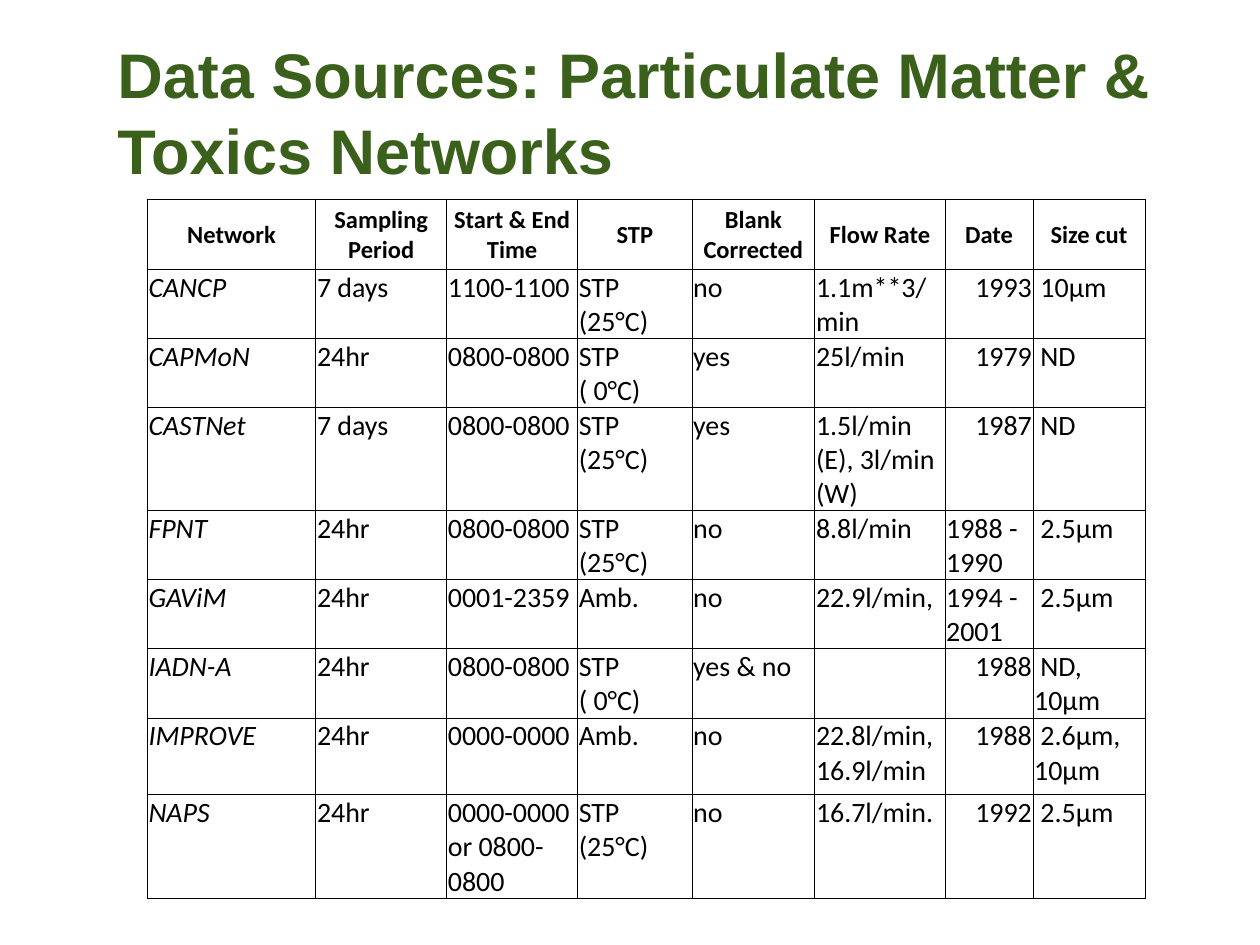
"""Build a slide with a table of particulate matter and toxics networks."""
from lxml import etree
from pptx import Presentation
from pptx.enum.text import MSO_ANCHOR, PP_ALIGN
from pptx.dml.color import RGBColor
from pptx.oxml.ns import qn
from pptx.util import Pt

TOP, MIDDLE = MSO_ANCHOR.TOP, MSO_ANCHOR.MIDDLE
LEFT, CENTER, RIGHT = PP_ALIGN.LEFT, PP_ALIGN.CENTER, PP_ALIGN.RIGHT

COLORS = {"title": "3A601B", "text": "000000", "border": "000000"}
TITLE = "Data Sources: Particulate Matter & Toxics Networks"
HEADER = ["Network", "Sampling Period", "Start & End Time", "STP",
          "Blank Corrected", "Flow Rate", "Date", "Size cut"]
NETWORKS = [
    ["CANCP", "7 days", "1100-1100", "STP  (25°C)", "no", "1.1m**3/min", "1993", " 10µm"],
    ["CAPMoN", "24hr", "0800-0800", "STP  ( 0°C)", "yes", "25l/min", "1979", " ND"],
    ["CASTNet", "7 days", "0800-0800", "STP (25°C)", "yes", "1.5l/min (E), 3l/min (W)", "1987", " ND"],
    ["FPNT", "24hr", "0800-0800", "STP (25°C)", "no", "8.8l/min", "1988 - 1990", " 2.5µm"],
    ["GAViM", "24hr", "0001-2359", "Amb.", "no", "22.9l/min,", "1994 - 2001", " 2.5µm"],
    ["IADN-A", "24hr", "0800-0800", "STP  ( 0°C)", "yes & no", "", "1988", " ND, 10µm"],
    ["IMPROVE", "24hr", "0000-0000", "Amb.", "no", "22.8l/min, 16.9l/min", "1988", " 2.6µm, 10µm"],
    ["NAPS", "24hr", "0000-0000 or 0800-0800", "STP (25°C)", "no", "16.7l/min.", "1992", " 2.5µm"],
]
COL_WIDTHS = [96.3, 74.8, 74.8, 65.4, 70.2, 74.4, 50.3, 64]
ROW_HEIGHTS = [40, 39.5, 39.5, 59, 39.5, 39.5, 39.5, 44, 59]
TITLE_BOX = (60, 21.6, 642, 84)
TABLE_POS = (84.2, 113.8)
TITLE_FONT = {"name": "Arial", "size": Pt(36), "bold": True}
HEADER_FONT = {"name": "Calibri", "size": Pt(14), "bold": True}
BODY_FONT = {"name": "Calibri", "size": Pt(16), "bold": False}
CELL_FORMAT = {"margin_left": Pt(0.7), "margin_top": Pt(0.7),
               "margin_right": Pt(0.7), "margin_bottom": Pt(0)}
DATE_COL = HEADER.index("Date")


def set_all(obj, values):
    for name, value in values.items():
        setattr(obj, name, value)


def write(p, text, font, color, align=LEFT):
    p.alignment = align
    set_all(p.font, font)
    if text:
        r = p.add_run()
        r.text = text
        set_all(r.font, font)
        r.font.color.rgb = RGBColor.from_string(COLORS[color])


def add_borders(cell):
    tc_pr = cell._tc.get_or_add_tcPr()
    for i, tag in enumerate(("a:lnL", "a:lnR", "a:lnT", "a:lnB")):
        ln = etree.Element(qn(tag), w=str(Pt(0.5)))
        fill = etree.SubElement(ln, qn("a:solidFill"))
        etree.SubElement(fill, qn("a:srgbClr"), val=COLORS["border"])
        tc_pr.insert(i, ln)


def add_title(s):
    tf = s.shapes.add_textbox(*map(Pt, TITLE_BOX)).text_frame
    set_all(tf, {"word_wrap": True, "vertical_anchor": MIDDLE})
    write(tf.paragraphs[0], TITLE, TITLE_FONT, "title")


def add_networks(s):
    rows = [HEADER] + NETWORKS
    size = (sum(COL_WIDTHS), sum(ROW_HEIGHTS))
    table = s.shapes.add_table(len(rows), len(HEADER), *map(Pt, TABLE_POS + size)).table
    set_all(table, {"first_row": False, "horz_banding": False})
    for column, width in zip(table.columns, COL_WIDTHS):
        column.width = Pt(width)
    for row, height in zip(table.rows, ROW_HEIGHTS):
        row.height = Pt(height)
    for i, row in enumerate(rows):
        for j, text in enumerate(row):
            cell = table.cell(i, j)
            set_all(cell, CELL_FORMAT)
            cell.vertical_anchor = TOP if i else MIDDLE
            cell.fill.background()
            add_borders(cell)
            if i == 0:
                font, align = HEADER_FONT, CENTER
            else:
                font = {**BODY_FONT, "italic": j == 0}
                align = RIGHT if j == DATE_COL and text.isdigit() else LEFT
            write(cell.text_frame.paragraphs[0], text, font, "text", align)


def main():
    prs = Presentation()
    prs.slide_width, prs.slide_height = Pt(720), Pt(540)
    s = prs.slides.add_slide(prs.slide_layouts[6])
    add_title(s)
    add_networks(s)
    prs.save("out.pptx")


if __name__ == "__main__":
    main()
